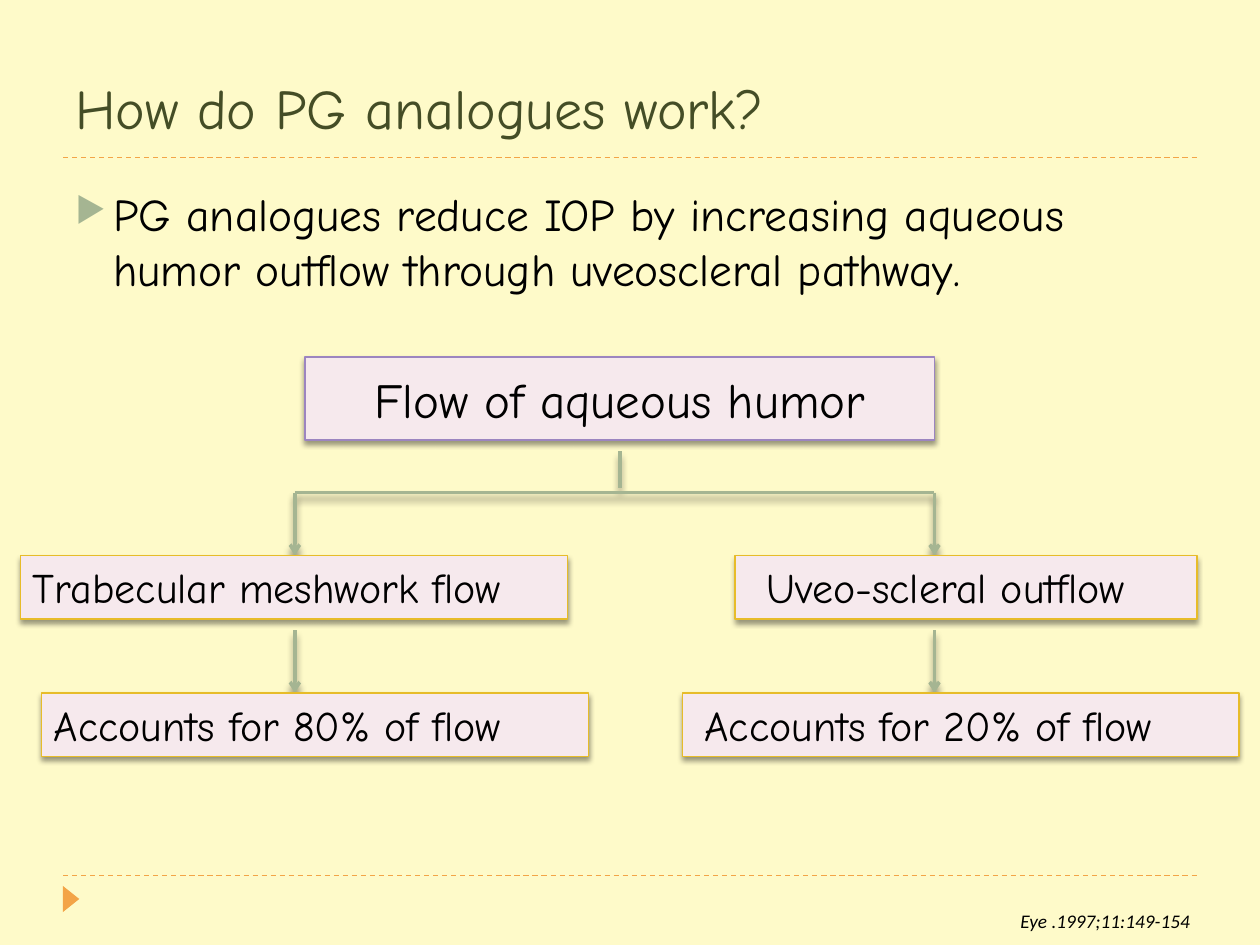
from lxml.etree import SubElement
from pptx import Presentation
from pptx.dml.color import RGBColor
from pptx.enum.dml import MSO_LINE
from pptx.enum.shapes import MSO_CONNECTOR, MSO_SHAPE
from pptx.enum.text import MSO_ANCHOR, PP_ALIGN
from pptx.oxml.ns import qn
from pptx.util import Pt

CREAM, BLACK, OLIVE = "FEFAC9", "000000", "444D26"
ORANGE, SAGE, PINK = "F3A447", "A5B592", "F6E9ED"
PURPLE, GOLD = "9C85C0", "E7BC29"
HAND, PLAIN = "Comic Neue", "Calibri"


def rgb(value):
    return RGBColor.from_string(value)


def add_effects(shape, blur=None, distance=None):
    """Replace the theme shadow with a downward one, or with none."""
    properties = shape._element.spPr
    effects = SubElement(properties, qn("a:effectLst"))
    if blur is None:
        return
    shadow = SubElement(effects, qn("a:outerShdw"), blurRad=str(Pt(blur)),
                        dist=str(Pt(distance)), dir="5400000", rotWithShape="0")
    color = SubElement(shadow, qn("a:srgbClr"), val=BLACK)
    SubElement(color, qn("a:alpha"), val="40000")


def write(shape, text, size, color=BLACK, font=HAND, anchor=MSO_ANCHOR.TOP,
          align=PP_ALIGN.LEFT, indent=0):
    frame = shape.text_frame
    frame.word_wrap = True
    frame.vertical_anchor = anchor
    frame.margin_left = Pt(7.2 + indent)
    paragraph = frame.paragraphs[0]
    paragraph.text = text
    paragraph.alignment = align
    paragraph.font.size = Pt(size)
    paragraph.font.name = font
    paragraph.font.color.rgb = rgb(color)
    return paragraph


def add_text(slide, left, top, width, height, text, size, **style):
    box = slide.shapes.add_textbox(Pt(left), Pt(top), Pt(width), Pt(height))
    return write(box, text, size, **style)


def add_bullet(paragraph, symbol, color, percent, hanging):
    properties = paragraph._p.get_or_add_pPr()
    properties.set("marL", str(Pt(hanging)))
    properties.set("indent", str(-Pt(hanging)))
    bullet_color = SubElement(properties, qn("a:buClr"))
    SubElement(bullet_color, qn("a:srgbClr"), val=color)
    SubElement(properties, qn("a:buSzPct"), val=str(percent * 1000))
    SubElement(properties, qn("a:buChar"), char=symbol)


def add_box(slide, left, top, width, height, text, size, border, **style):
    box = slide.shapes.add_shape(MSO_SHAPE.RECTANGLE, Pt(left), Pt(top),
                                 Pt(width), Pt(height))
    box.fill.solid()
    box.fill.fore_color.rgb = rgb(PINK)
    box.line.color.rgb = rgb(border)
    box.line.width = Pt(0.75)
    add_effects(box, 3, 2)
    write(box, text, size, **style)


def add_line(slide, x1, y1, x2, y2, color, width):
    line = slide.shapes.add_connector(MSO_CONNECTOR.STRAIGHT,
                                      Pt(x1), Pt(y1), Pt(x2), Pt(y2))
    line.line.color.rgb = rgb(color)
    line.line.width = Pt(width)
    return line


def add_rule(slide, y):
    rule = add_line(slide, 36, y, 684, y, ORANGE, 0.75)
    rule.line.dash_style = MSO_LINE.DASH
    add_effects(rule)


def add_branch(slide, x1, y1, x2, y2, arrow=False):
    branch = add_line(slide, x1, y1, x2, y2, SAGE, 2)
    if arrow:
        SubElement(branch.line._get_or_add_ln(), qn("a:tailEnd"), type="arrow")
    add_effects(branch, 4, 3.4)


def add_page_marker(slide):
    marker = slide.shapes.add_shape(MSO_SHAPE.ISOSCELES_TRIANGLE,
                                    Pt(33.1), Pt(509), Pt(15), Pt(9.4))
    marker.rotation = 90
    marker.fill.solid()
    marker.fill.fore_color.rgb = rgb(ORANGE)
    marker.line.fill.background()
    marker.shadow.inherit = False


def add_flowchart(slide):
    left_x, right_x, middle_x = 168.5, 534, 354.25
    fork_y, pathway_y, share_y = 281.5, 317.5, 396
    add_box(slide, 174.25, 204, 360, 47.5, "Flow of aqueous humor", 28, PURPLE,
            anchor=MSO_ANCHOR.MIDDLE, align=PP_ALIGN.CENTER)
    add_branch(slide, middle_x, 258, middle_x, 279)
    add_branch(slide, left_x, fork_y, right_x, fork_y)
    for x in (left_x, right_x):
        add_branch(slide, x, fork_y, x, pathway_y, arrow=True)
        add_branch(slide, x, 360, x, share_y, arrow=True)

    for left, top, width, text, indent in (
        (11.75, pathway_y, 312.5, "Trabecular meshwork flow", 0),
        (420, pathway_y, 264, "Uveo-scleral outflow", 10.8),
        (23.75, share_y, 312.5, "Accounts for 80% of flow", 0),
        (390, share_y, 318, "Accounts for 20% of flow", 5.4),
    ):
        add_box(slide, left, top, width, 36.35, text, 24, GOLD, indent=indent)


def main():
    presentation = Presentation()
    presentation.slide_width, presentation.slide_height = Pt(720), Pt(540)
    slide = presentation.slides.add_slide(presentation.slide_layouts[6])
    slide.background.fill.solid()
    slide.background.fill.fore_color.rgb = rgb(CREAM)

    for y in (500.25, 90):
        add_rule(slide, y)
    add_page_marker(slide)
    add_text(slide, 36, 6, 648, 78, "How do PG analogues work?", 32,
             color=OLIVE, anchor=MSO_ANCHOR.BOTTOM)
    summary = add_text(
        slide, 36, 103, 648, 389,
        "PG analogues reduce IOP by increasing aqueous humor outflow "
        "through uveoscleral pathway.", 26)
    summary.space_before = Pt(6)
    add_bullet(summary, "▶", SAGE, 76, 21.6)
    add_flowchart(slide)
    citation = add_text(slide, 576, 516, 132, 20.6, "Eye .1997;11:149-154", 11,
                        font=PLAIN)
    citation.font.italic = True
    presentation.save("out.pptx")


if __name__ == "__main__":
    main()
